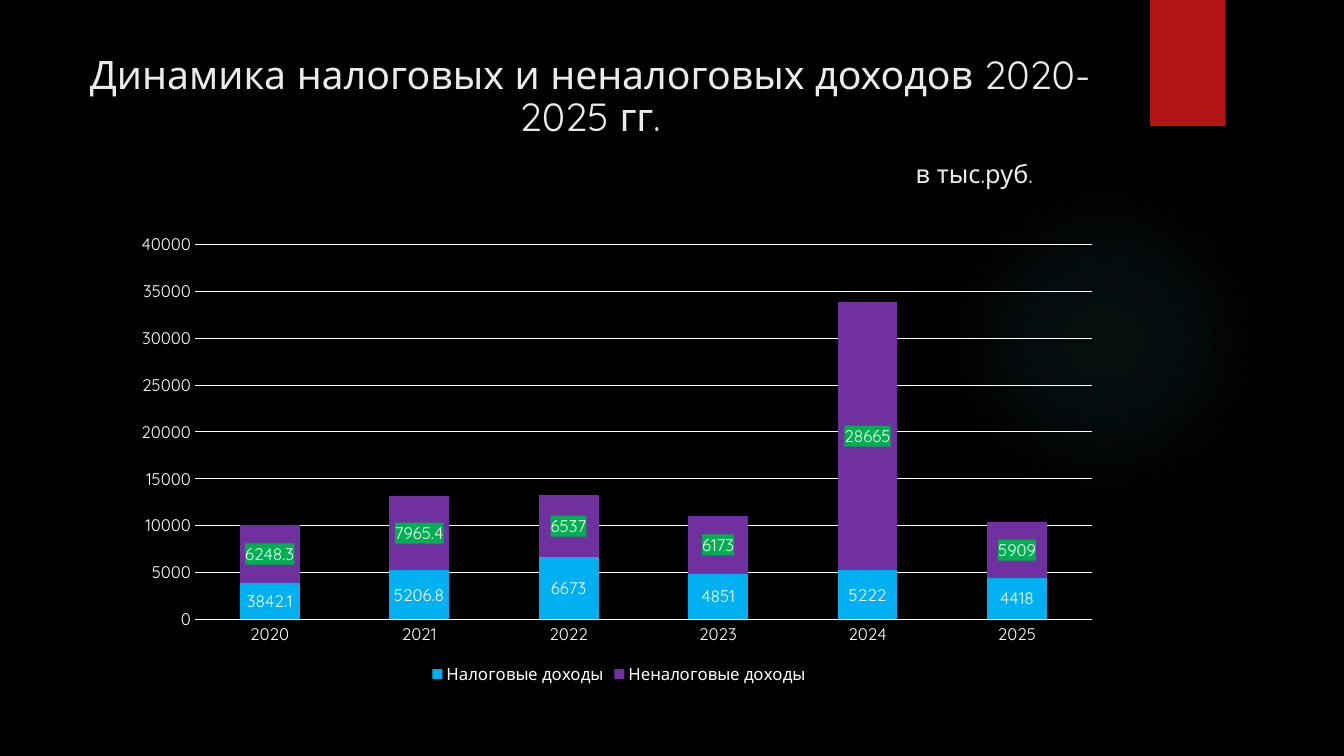
from lxml import etree
from pptx import Presentation
from pptx.chart.data import CategoryChartData
from pptx.dml.color import RGBColor
from pptx.enum.chart import XL_CHART_TYPE as CT, XL_LABEL_POSITION as LP
from pptx.enum.chart import XL_LEGEND_POSITION as LEG, XL_TICK_MARK as TICK
from pptx.enum.shapes import MSO_SHAPE as SHAPE
from pptx.enum.text import PP_ALIGN as AL
from pptx.oxml import parse_xml
from pptx.oxml.ns import nsdecls, qn
from pptx.util import Pt

COLORS = {"bg": "000000", "glow": "50B9C1", "ribbon": "B01513", "title": "EBEBEB",
          "white": "FFFFFF", "tax": "00B0F0", "nontax": "7030A0", "label": "00B050"}
YEARS = ["2020", "2021", "2022", "2023", "2024", "2025"]
# name, values, colour, label fill, labels worded by hand
SERIES = [
    ("Налоговые доходы", (3842.1, 5206.8, 6673, 4851, 5223, 4418), "tax", None, {4: "5222"}),
    ("Неналоговые доходы", (6248.3, 7965.4, 6537, 6177, 28665, 5909), "nontax", "label", {3: "6173"}),
]


def rgb(name):
    return RGBColor.from_string(COLORS[name])


class Deck:
    font = "Quicksand"

    def __init__(self, prs):
        self.s = prs.slides.add_slide(prs.slide_layouts[6])
        self.s.background.fill.solid()
        self.s.background.fill.fore_color.rgb = rgb("bg")

    def style(self, font, size, color="white"):
        font.name, font.size, font.bold = self.font, Pt(size), False
        font.color.rgb = rgb(color)

    def shape(self, kind, x, y, w, h, color):
        sp = self.s.shapes.add_shape(kind, Pt(x), Pt(y), Pt(w), Pt(h))
        sp.shadow.inherit = False
        sp.fill.solid()
        sp.fill.fore_color.rgb = rgb(color)
        sp.line.fill.background()
        return sp

    def glow(self, x, y, size, color, stops):
        sp = self.shape(SHAPE.OVAL, x, y, size, size, color)
        gs = "".join(f'<a:gs pos="{pos * 1000}"><a:srgbClr val="{COLORS[color]}">'
                     f'<a:alpha val="{alpha * 1000}"/></a:srgbClr></a:gs>' for pos, alpha in stops)
        grad = parse_xml(f'<a:gradFill {nsdecls("a")}><a:gsLst>{gs}</a:gsLst><a:path path="circle">'
                         '<a:fillToRect l="50000" t="50000" r="50000" b="50000"/></a:path></a:gradFill>')
        solid = sp._element.spPr.find(qn("a:solidFill"))
        solid.getparent().replace(solid, grad)

    def text(self, x, y, w, h, text, size, align):
        tf = self.s.shapes.add_textbox(Pt(x), Pt(y), Pt(w), Pt(h)).text_frame
        tf.word_wrap = True
        p = tf.paragraphs[0]
        p.text, p.alignment, p.line_spacing = text, align, 0.9
        self.style(p.font, size, "title")

    def chart(self, x, y, w, h, plot_area):
        data = CategoryChartData()
        data.categories = YEARS
        for name, values, *_ in SERIES:
            data.add_series(name, values)
        chart = self.s.shapes.add_chart(CT.COLUMN_STACKED, Pt(x), Pt(y), Pt(w), Pt(h), data).chart
        self.style(chart.font, 12)
        chart.has_title = False
        chart.has_legend = True
        chart.legend.position = LEG.BOTTOM
        chart.legend.include_in_layout = False
        self.style(chart.legend.font, 12)

        # Axes
        val, cat = chart.value_axis, chart.category_axis
        for axis in (val, cat):
            axis.major_tick_mark = axis.minor_tick_mark = TICK.NONE
            self.style(axis.tick_labels.font, 12)
        val.minimum_scale, val.maximum_scale, val.major_unit = 0, 40000, 5000
        val.format.line.fill.background()
        for line in (val.major_gridlines.format.line, cat.format.line):
            line.color.rgb, line.width = rgb("white"), Pt(0.75)

        # Columns and their labels
        plot = chart.plots[0]
        plot.gap_width, plot.overlap, plot.vary_by_categories = 150, 100, False
        for ser, (_, _, color, label_fill, worded) in zip(plot.series, SERIES):
            ser.format.fill.solid()
            ser.format.fill.fore_color.rgb = rgb(color)
            labels = ser.data_labels
            labels.show_value, labels.position = True, LP.CENTER
            self.style(labels.font, 12)
            self.label_fill(labels._element, label_fill)
            for i, text in worded.items():
                label = ser.points[i].data_label
                p = label.text_frame.paragraphs[0]
                p.text = text
                self.style(p.font, 12)
                label.position = LP.CENTER
                self.label_fill(labels._element.find(qn("c:dLbl")), label_fill)
        self.layout(chart, plot_area)

    def label_fill(self, el, color):
        if color is None:
            return
        old = el.find(qn("c:spPr"))
        if old is not None:
            el.remove(old)
        before = el.find(qn("c:txPr"))
        if before is None:
            before = el.find(qn("c:dLblPos"))
        before.addprevious(parse_xml(
            f'<c:spPr {nsdecls("c", "a")}><a:solidFill><a:srgbClr val="{COLORS[color]}"/>'
            '</a:solidFill></c:spPr>'))

    def layout(self, chart, plot_area):
        area = chart._chartSpace.chart.plotArea
        old = area.find(qn("c:layout"))
        if old is not None:
            area.remove(old)
        layout = etree.Element(qn("c:layout"))
        manual = etree.SubElement(layout, qn("c:manualLayout"))
        parts = [("layoutTarget", "inner"), ("xMode", "edge"), ("yMode", "edge"),
                 *zip("xywh", plot_area)]
        for tag, value in parts:
            etree.SubElement(manual, qn(f"c:{tag}")).set("val", str(value))
        area.insert(0, layout)


def main():
    prs = Presentation()
    prs.slide_width, prs.slide_height = Pt(960), Pt(540)
    deck = Deck(prs)

    # Backdrop
    deck.glow(677.5, 132, 222, "glow", [(0, 7), (36, 6), (69, 0)])
    deck.shape(SHAPE.RECTANGLE, 821.5, 0, 54, 90, "ribbon")

    # Heading and unit
    deck.text(51, 36, 741, 75, "Динамика налоговых и неналоговых доходов 2020-2025 гг.", 28, AL.CENTER)
    deck.text(595, 112, 150, 30, "в тыс.руб.", 18, AL.RIGHT)

    # Income by year
    deck.chart(90, 161.5, 704, 330.5, (0.07, 0.04, 0.91, 0.81))
    prs.save("out.pptx")


if __name__ == "__main__":
    main()
